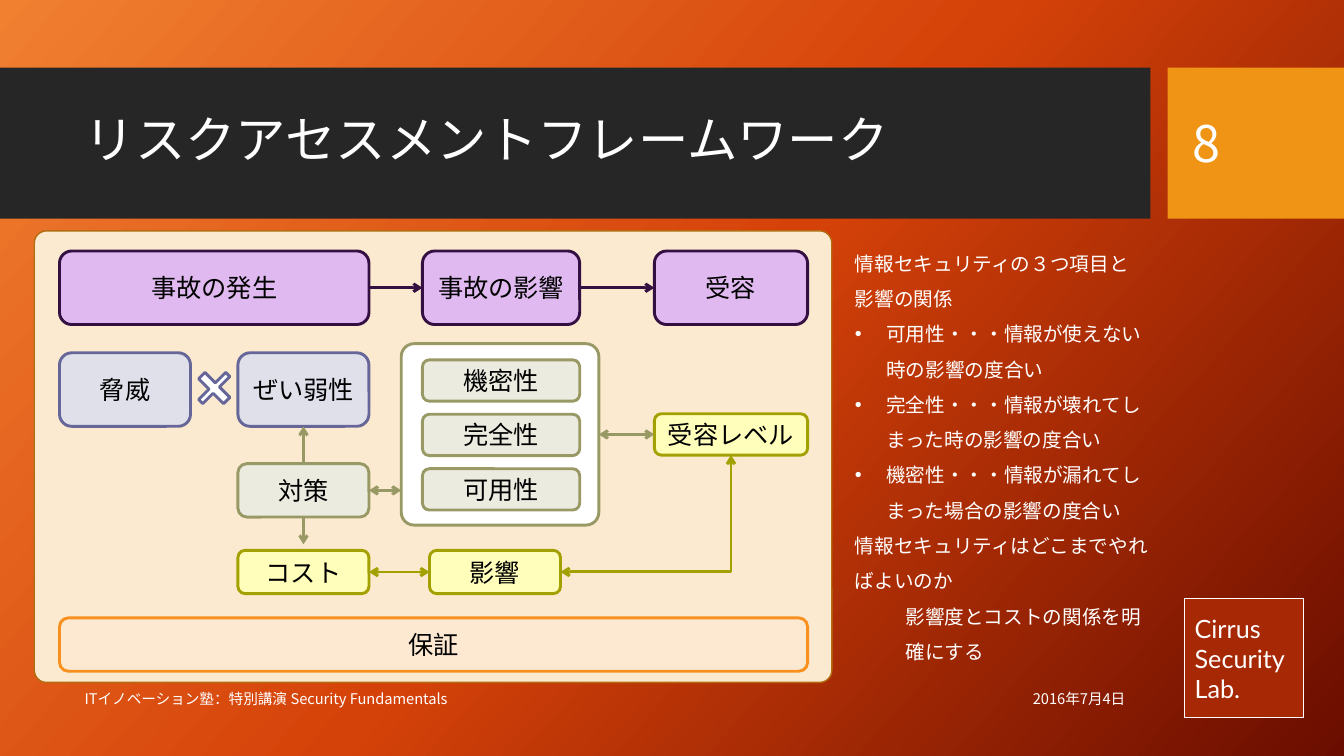
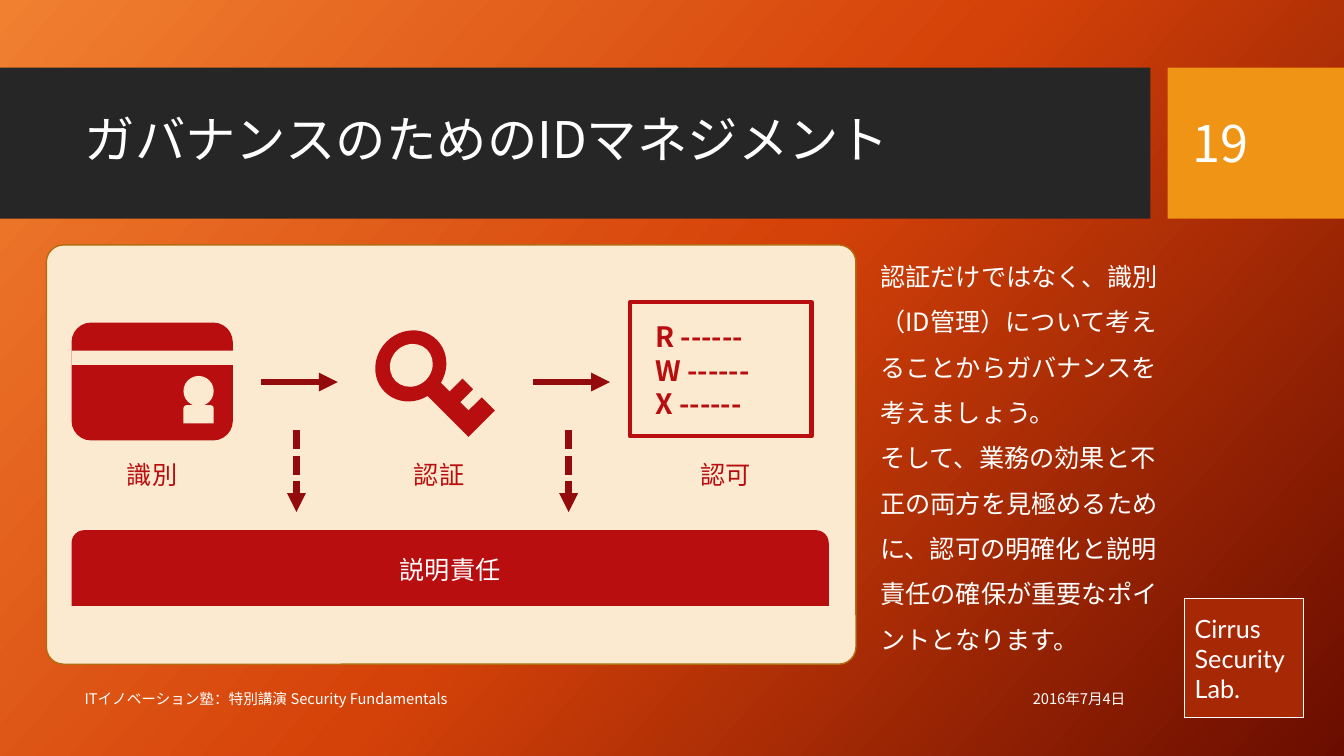
from copy import deepcopy
from dataclasses import dataclass

from lxml.etree import SubElement
from pptx import Presentation
from pptx.dml.color import RGBColor
from pptx.enum.dml import MSO_LINE
from pptx.enum.shapes import MSO_CONNECTOR as Wire, MSO_SHAPE as Form
from pptx.enum.text import MSO_ANCHOR as Anchor, MSO_AUTO_SIZE as Fit, PP_ALIGN as Align
from pptx.oxml.ns import qn
from pptx.util import Inches, Pt

UNIT = Inches(0.1)  # pitch of the layout grid
SANS, LATIN = "Noto Sans CJK JP", "Lato"
ELL = Form.from_xml("corner")

WHITE = RGBColor(0xFF, 0xFF, 0xFF)
BLACK = RGBColor(0, 0, 0)
DARK = RGBColor(0x26, 0x26, 0x26)
AMBER = RGBColor(0xF0, 0x94, 0x15)
BADGE = RGBColor(0xA6, 0x28, 0x05)
CREAM = RGBColor(0xFC, 0xEA, 0xD0)
BROWN = RGBColor(0xB2, 0x6D, 0x10)
RED = RGBColor(0xB8, 0x0E, 0x0F)
MAROON = RGBColor(0x93, 0x0B, 0x0C)
PLUM = RGBColor(0x33, 0x0F, 0x42)
SLATE = RGBColor(0x66, 0x66, 0x99)
SAGE = RGBColor(0x99, 0x99, 0x66)
OLIVE = RGBColor(0xA3, 0xA1, 0x01)
GLOW = (RGBColor(0xF1, 0x80, 0x31), RGBColor(0xD5, 0x42, 0x09), RGBColor(0x6A, 0x0D, 0x00))

# fill and line of each kind of node
EVENT = (RGBColor(0xDF, 0xB9, 0xEF), PLUM)
RISK = (RGBColor(0xE0, 0xE0, 0xEB), SLATE)
CARE = (RGBColor(0xEB, 0xEB, 0xE0), SAGE)
MONEY = (RGBColor(0xFF, 0xFE, 0xBA), OLIVE)
TRUST = (RGBColor(0xFD, 0xE9, 0xD2), RGBColor(0xF7, 0x90, 0x1E))


@dataclass
class Box:
    """A region measured in columns and rows of the grid."""
    x: float
    y: float
    w: float = 0
    h: float = 0

    def sub(self, x, y, w=0, h=0):
        return Box(self.x + x, self.y + y, w, h)

    def emu(self):
        return [round(v * UNIT) for v in (self.x, self.y, self.w, self.h)]


def style(para, size, color, face=SANS, bold=False, align=Align.LEFT, gap=None):
    para.alignment = align
    para.space_before = Pt(0)
    if gap:
        para.line_spacing = gap
    font = para.font
    font.size, font.bold, font.name = Pt(size), bold, face
    font.color.rgb = color
    props = para._p.pPr.find(qn("a:defRPr"))
    SubElement(props, qn("a:ea")).set("typeface", SANS)


def write(frame, lines, size, color, anchor=Anchor.MIDDLE, **look):
    frame.word_wrap = True
    frame.auto_size = Fit.NONE
    frame.vertical_anchor = anchor
    for i, line in enumerate(lines):
        para = frame.add_paragraph() if i else frame.paragraphs[0]
        para.text = line
        style(para, size, color, **look)


def label(slide, box, text, size, color, **look):
    area = slide.shapes.add_textbox(*box.emu())
    write(area.text_frame, [text], size, color, **look)
    return area


def draw(slide, box, fill=None, line=None, width=1, form=Form.RECTANGLE, turn=0, adj=None):
    shape = slide.shapes.add_shape(form, *box.emu())
    shape.shadow.inherit = False
    shape.rotation = turn
    if adj is not None:
        shape.adjustments[0] = adj
    if fill is None:
        shape.fill.background()
    else:
        shape.fill.solid()
        shape.fill.fore_color.rgb = fill
    if line is None:
        shape.line.fill.background()
    else:
        shape.line.color.rgb = line
        shape.line.width = Pt(width)
    return shape


def link(slide, start, end, color, width=2.08, tip="arrow", both=False, dash=None, bent=False):
    """Join two ends; each is a Box point or a (shape, side) pair."""
    wire = slide.shapes.add_connector(Wire.ELBOW if bent else Wire.STRAIGHT, 0, 0, 0, 0)
    if isinstance(start, Box):
        wire.begin_x, wire.begin_y = start.emu()[:2]
    else:
        wire.begin_connect(*start)
    if isinstance(end, Box):
        wire.end_x, wire.end_y = end.emu()[:2]
    else:
        wire.end_connect(*end)
    wire.line.color.rgb = color
    wire.line.width = Pt(width)
    if dash:
        wire.line.dash_style = dash
    props = wire._element.spPr
    if bent:
        props.find(qn("a:prstGeom")).set("prst", "bentConnector2")
    line = props.find(qn("a:ln"))
    for tag in ("a:headEnd", "a:tailEnd") if both else ("a:tailEnd",):
        SubElement(line, qn(tag)).set("type", tip)
    SubElement(props, qn("a:effectLst"))


def glow(master):
    """Diagonal three-stop background."""
    fill = master.background.fill
    fill.gradient()
    fill.gradient_angle = 318
    stops = master.element.find(".//" + qn("a:gsLst"))
    stops.append(deepcopy(stops[0]))
    for i, (stop, color) in enumerate(zip(fill.gradient_stops, GLOW)):
        stop.color.rgb = color
        stop.position = i / 2


def frame(slide, layout):
    """Draw the bands, badge and footers, then hand them to the layout."""
    badge = draw(slide, Box(117.5, 59.4, 11.8, 11.8), BADGE, WHITE)
    write(badge.text_frame, ["Cirrus", "Security", "Lab."], 18, WHITE, face=LATIN)
    parts = [
        badge,
        draw(slide, Box(0, 6.7, 114.1, 15), DARK),
        draw(slide, Box(115.8, 6.7, 17.5, 15), AMBER),
        label(slide, Box(82.6, 67.3, 30, 4), "2016年7月4日", 10.5, WHITE, align=Align.RIGHT),
        label(slide, Box(7.4, 67.3, 75.1, 4),
              "ITイノベーション塾：特別講演 Security Fundamentals", 10.5, WHITE),
    ]
    for i, part in enumerate(parts):
        layout.shapes.element.insert(2 + i, part.element)


def head(slide, text, number):
    title = slide.shapes.title
    title.left, title.top, title.width, title.height = Box(7.4, 8.2, 105.1, 11.8).emu()
    write(title.text_frame, [text], 36, WHITE, gap=0.9)
    label(slide, Box(117.3, 8.2, 12.6, 11.9), number, 36, WHITE)


def notes(slide, box, items, size):
    """Fill the body; each item is a text and its kind: plain, dot or deep."""
    body = slide.placeholders[1]
    body.left, body.top, body.width, body.height = box.emu()
    area = body.text_frame
    area.word_wrap, area.auto_size, area.vertical_anchor = True, Fit.NONE, Anchor.TOP
    indents = {"plain": (0, 0), "dot": (0.31, -0.31), "deep": (0.5, 0)}
    for i, (text, kind) in enumerate(items):
        para = area.add_paragraph() if i else area.paragraphs[0]
        para.text = text
        para.level = int(kind == "deep")
        props = para._p.get_or_add_pPr()
        for key, inch in zip(("marL", "indent"), indents[kind]):
            props.set(key, str(Inches(inch)))
        if kind == "dot":
            SubElement(props, qn("a:buChar")).set("char", "•")
        else:
            SubElement(props, qn("a:buNone"))
        style(para, size, WHITE, gap=1.5)


def panel(slide, box, adj):
    draw(slide, box, CREAM, BROWN, form=Form.ROUNDED_RECTANGLE, adj=adj)


def risks(slide, box):
    """Flow of risk assessment."""
    panel(slide, box, 0.027)

    def node(text, x, y, w, h, kind):
        shape = draw(slide, box.sub(x, y, w, h), *kind, 2.08, Form.ROUNDED_RECTANGLE)
        write(shape.text_frame, [text], 18, BLACK, face=LATIN, align=Align.CENTER)
        return shape

    left, mid, core, right = 2.5, 20.2, 38.5, 61.5
    small, wide, slim = 13, 15.6, 15.2
    top, row, base = 2, 12.1, 31.7
    tall, low, flat = 7.3, 5.3, 4.1

    triad = draw(slide, box.sub(36.4, 11.2, 19.6, 18), WHITE, SAGE, 2.08,
                 Form.ROUNDED_RECTANGLE, adj=0.071)
    for i, text in enumerate(("機密性", "完全性", "可用性")):
        node(text, core, 12.8 + 5.4 * i, wide, flat, CARE)

    start = node("事故の発生", left, top, mid + small - left, tall, EVENT)
    impact = node("事故の影響", core, top, wide, tall, EVENT)
    accept = node("受容", right, top, slim, tall, EVENT)
    node("脅威", left, row, small, tall, RISK)
    weak = node("ぜい弱性", mid, row, small, tall, RISK)
    draw(slide, box.sub(16.1, 13.7, 3.5, 3.8), WHITE, SLATE, 2.08, Form.CROSS, 45, 0.417)
    guard = node("対策", mid, 23.1, small, low, CARE)
    level = node("受容レベル", right, 18.15, slim, flat, MONEY)
    cost = node("コスト", mid, base, small, 4.3, MONEY)
    effect = node("影響", 39.2, base, small, 4.3, MONEY)
    node("保証", left, 38.4, right + slim - left, low, TRUST)

    link(slide, (start, 3), (impact, 1), PLUM)
    link(slide, (impact, 3), (accept, 1), PLUM)
    link(slide, (guard, 0), (weak, 2), SAGE)
    link(slide, (guard, 2), box.sub(mid + small / 2, 31.1), SAGE)
    link(slide, (guard, 3), box.sub(36.4, 23.1 + low / 2), SAGE, both=True)
    link(slide, (triad, 3), (level, 1), SAGE, both=True)
    link(slide, (cost, 3), (effect, 1), OLIVE, both=True)
    link(slide, (effect, 3), (level, 2), OLIVE, both=True, bent=True)


def card(slide, box):
    draw(slide, box, RED, form=Form.ROUNDED_RECTANGLE)
    draw(slide, box.sub(0, 2.8, box.w, 1.4), CREAM)
    draw(slide, box.sub(11.1, 5.3, 3, 3), CREAM, form=Form.OVAL)
    draw(slide, box.sub(11.1, 8.2, 3, 1.8), CREAM, form=Form.ROUND_2_SAME_RECTANGLE)


def key(slide, box):
    for x, y, w, h, fill, form in (
            (0, 0, 7.3, 6.8, RED, Form.OVAL),
            (1.5, 1.3, 4.4, 4.1, CREAM, Form.OVAL),
            (6.5, 3.5, 3.7, 6.6, RED, ELL),
            (7, 5.4, 2.7, 1.5, RED, Form.RECTANGLE)):
        draw(slide, box.sub(x, y, w, h), fill, form=form, turn=315)


def rights(slide, box):
    area = draw(slide, box, None, RED, 3).text_frame
    area.margin_left, area.margin_top = Inches(0.25), Inches(0.17)
    write(area, [f"{mode} ------" for mode in "RWX"], 20, RED, Anchor.TOP, bold=True)


def access(slide, box):
    """Identify, authenticate, authorise, all resting on accountability."""
    panel(slide, box, 0.041)
    base = draw(slide, box.sub(2.5, 28.3, 75.1, 7.5), RED, form=Form.ROUND_2_SAME_RECTANGLE)
    write(base.text_frame, ["説明責任"], 18, WHITE, align=Align.CENTER)
    card(slide, box.sub(2.5, 7.7, 16, 11.7))
    key(slide, box.sub(32.5, 8.6))
    rights(slide, box.sub(57.9, 5.7, 18, 13.3))
    for i, text in enumerate(("識別", "認証", "認可")):
        label(slide, box.sub(5.5 + 28.45 * i, 20.8, 10, 4), text, 18, RED, align=Align.CENTER)
    for i in range(2):
        x = 21.3 + 27 * i
        link(slide, box.sub(x, 13.6), box.sub(x + 7.6, 13.6), MAROON, 4.5, "triangle")
        link(slide, box.sub(x + 3.5, 18.4), box.sub(x + 3.5, 26.5), MAROON, 4.5, "triangle",
             dash=MSO_LINE.SQUARE_DOT)


def main():
    deck = Presentation()
    deck.slide_width, deck.slide_height = Inches(13.33), Inches(7.5)
    glow(deck.slide_master)
    layout = deck.slide_layouts[1]
    first, second = (deck.slides.add_slide(layout) for _ in range(2))
    frame(first, layout)

    head(first, "リスクアセスメントフレームワーク", "8")
    risks(first, Box(3.4, 22.9, 79.1, 44.8))
    notes(first, Box(83.8, 23.3, 31.1, 43.4), [
        ("情報セキュリティの３つ項目と影響の関係", "plain"),
        ("可用性・・・情報が使えない時の影響の度合い", "dot"),
        ("完全性・・・情報が壊れてしまった時の影響の度合い", "dot"),
        ("機密性・・・情報が漏れてしまった場合の影響の度合い", "dot"),
        ("情報セキュリティはどこまでやればよいのか", "plain"),
        ("影響度とコストの関係を明確にする", "deep"),
    ], 14)

    head(second, "ガバナンスのためのIDマネジメント", "19")
    access(second, Box(4.6, 24.3, 80.3, 41.6))
    notes(second, Box(86.3, 23.9, 31, 41.9), [
        ("認証だけではなく、識別（ID管理）について考えることからガバナンスを考えましょう。", "plain"),
        ("そして、業務の効果と不正の両方を見極めるために、認可の明確化と説明責任の確保が"
         "重要なポイントとなります。", "plain"),
    ], 18)
    deck.save("out.pptx")


if __name__ == "__main__":
    main()
